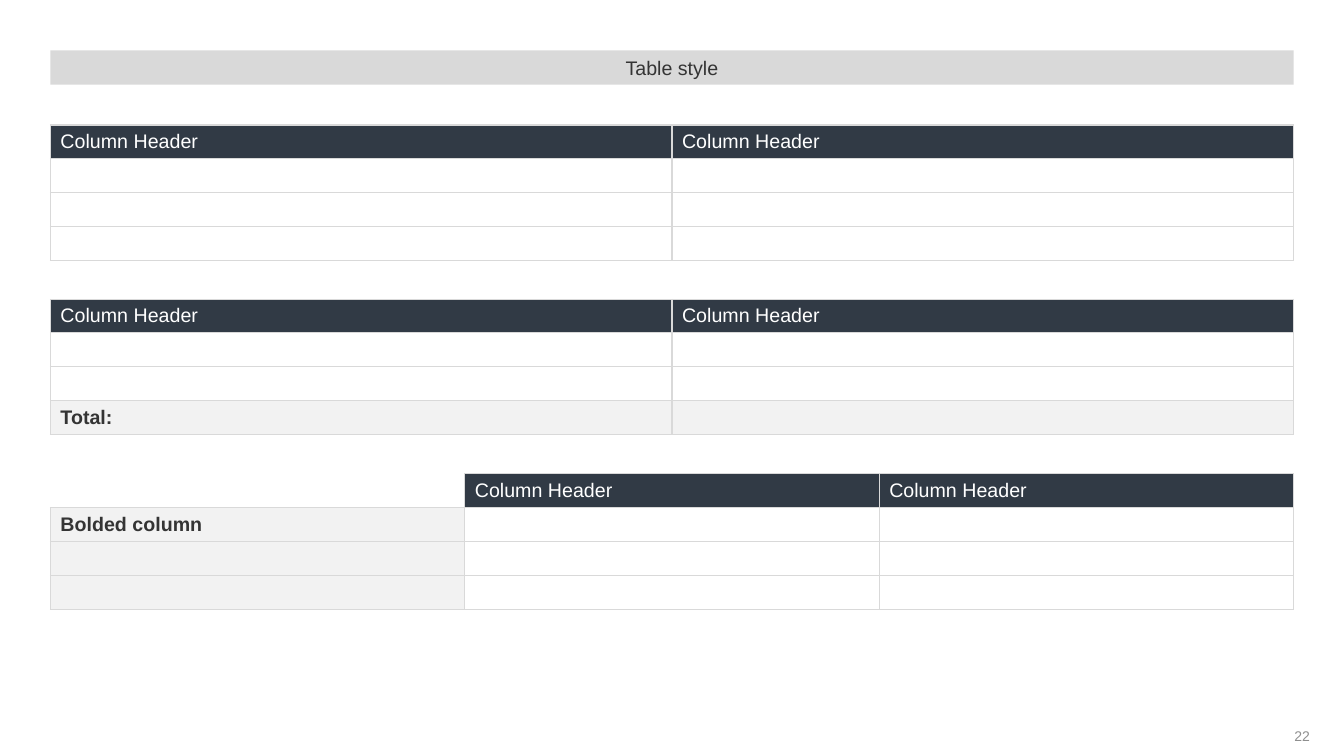
from lxml.etree import SubElement
from pptx import Presentation
from pptx.dml.color import RGBColor
from pptx.enum.shapes import MSO_SHAPE as Shape
from pptx.enum.text import MSO_ANCHOR as Anchor, PP_ALIGN as Align
from pptx.oxml.ns import qn
from pptx.util import Inches, Pt

TITLE = "Table style"
PAGE_NUMBER = "22"
HEADER = "Column Header"
TABLES = [
    [[HEADER, HEADER], ["", ""], ["", ""], ["", ""]],
    [[HEADER, HEADER], ["", ""], ["", ""], ["Total:", ""]],
    [["", HEADER, HEADER], ["Bolded column", "", ""], ["", "", ""], ["", "", ""]],
]
STYLES = [
    ["hh", "pp", "pp", "pp"],
    ["hh", "pp", "pp", "bb"],
    ["chh", "bpp", "bpp", "bpp"],
]
COLORS = {
    "header": "313A45", "plain": "FFFFFF", "accent": "F2F2F2",
    "bar": "D9D9D9", "border": "D9D9D9", "text": "343434", "number": "8F8F8F",
}
CELL_STYLES = {
    "h": ("header", "plain", False),
    "p": ("plain", "text", False),
    "b": ("accent", "text", True),
    "c": (None, "text", False),
}
WIDTH, HEIGHT = 13.33, 7.5
MARGIN = 0.5
CONTENT_WIDTH = WIDTH - 2 * MARGIN
TABLE_HEIGHT = 1.33
TABLE_TOP = 1.24
TABLE_STEP = TABLE_HEIGHT + 0.4
SIDES = ("L", "R", "T", "B")


def color(name):
    return RGBColor.from_string(COLORS[name])


def write(frame, text, size, tint, bold=False, align=Align.LEFT):
    para = frame.paragraphs[0]
    para.alignment = align
    span = para.add_run()
    span.text = text
    formats = {"name": "Arial", "size": Pt(size), "bold": bold}
    for key, value in formats.items():
        setattr(span.font, key, value)
    span.font.color.rgb = color(tint)


def set_borders(cell, visible):
    properties = cell._tc.get_or_add_tcPr()
    for side in SIDES:
        line = SubElement(properties, qn(f"a:ln{side}"), w=str(Pt(1)))
        if side in visible:
            fill = SubElement(line, qn("a:solidFill"))
            SubElement(fill, qn("a:srgbClr"), val=COLORS["border"])
        else:
            SubElement(line, qn("a:noFill"))


def fill_cell(cell, text, style):
    fill, tint, bold = CELL_STYLES[style]
    set_borders(cell, SIDES if fill else ("R", "B"))
    if fill:
        cell.fill.solid()
        cell.fill.fore_color.rgb = color(fill)
    else:
        cell.fill.background()
    cell.vertical_anchor = Anchor.MIDDLE
    if text:
        write(cell.text_frame, text, 14, tint, bold)
    else:
        SubElement(cell.text_frame.paragraphs[0]._p, qn("a:endParaRPr"), sz="1400")


def add_grid(page, top, rows, styles):
    columns = len(rows[0])
    frame = page.shapes.add_table(
        len(rows), columns, Inches(MARGIN), Inches(top),
        Inches(CONTENT_WIDTH), Inches(TABLE_HEIGHT))
    table = frame.table
    table.first_row = table.horz_banding = False
    for column in table.columns:
        column.width = Inches(CONTENT_WIDTH / columns)
    for row, texts, row_styles in zip(table.rows, rows, styles):
        row.height = Inches(TABLE_HEIGHT / len(rows))
        for cell, text, style in zip(row.cells, texts, row_styles):
            fill_cell(cell, text, style)


def main():
    deck = Presentation()
    deck.slide_width, deck.slide_height = Inches(WIDTH), Inches(HEIGHT)
    page = deck.slides.add_slide(deck.slide_layouts[6])

    bar = page.shapes.add_shape(
        Shape.RECTANGLE, Inches(MARGIN), Inches(MARGIN), Inches(CONTENT_WIDTH), Inches(0.34))
    bar.shadow.inherit = False
    bar.fill.solid()
    bar.fill.fore_color.rgb = color("bar")
    bar.line.fill.background()
    bar.text_frame.vertical_anchor = Anchor.MIDDLE
    write(bar.text_frame, TITLE, 14, "text", align=Align.CENTER)

    for index, (rows, styles) in enumerate(zip(TABLES, STYLES)):
        add_grid(page, TABLE_TOP + index * TABLE_STEP, rows, styles)

    box = page.shapes.add_textbox(Inches(12.49), Inches(7.1), Inches(0.6), Inches(0.4))
    box.text_frame.word_wrap = True
    box.text_frame.vertical_anchor = Anchor.MIDDLE
    write(box.text_frame, PAGE_NUMBER, 10, "number", align=Align.RIGHT)

    deck.save("out.pptx")


if __name__ == "__main__":
    main()
